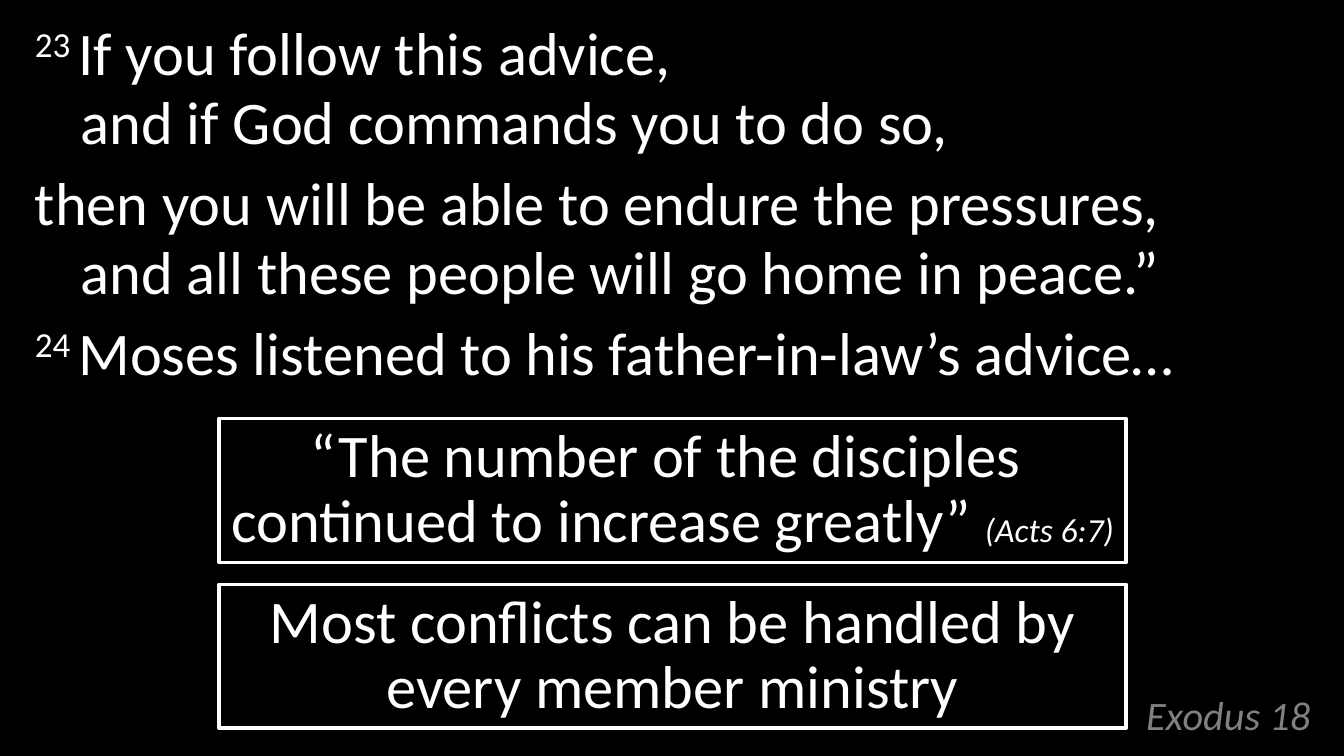
import pptx
import pptx.util
import pptx.dml.color
import pptx.enum.shapes
import pptx.enum.text

Inches = pptx.util.Inches
Pt = pptx.util.Pt
ALIGN = pptx.enum.text.PP_ALIGN
ANCHOR = pptx.enum.text.MSO_ANCHOR

WHITE, BLACK, GRAY = "FFFFFF", "000000", "808080"


def color(hex_code):
    return pptx.dml.color.RGBColor.from_string(hex_code)


def add_run(p, text, size=36, hex_code=WHITE, italic=False, superscript=False):
    r = p.add_run()
    r.text = text
    r.font.name = "Calibri"
    r.font.size = Pt(size)
    r.font.italic = italic
    r.font.color.rgb = color(hex_code)
    if superscript:
        r._r.get_or_add_rPr().set("baseline", "30000")


def add_lines(p, lines):
    for i, line in enumerate(lines):
        if i:
            p.add_line_break()
        add_run(p, line)


def add_text_frame(s, box, anchor):
    tf = s.shapes.add_textbox(*map(Inches, box)).text_frame
    tf.word_wrap = True
    tf.vertical_anchor = anchor
    return tf


def add_reference(s, box, text):
    p = add_text_frame(s, box, ANCHOR.BOTTOM).paragraphs[0]
    p.alignment = ALIGN.RIGHT
    p.line_spacing = 0.8
    add_run(p, text, 24, GRAY, italic=True)


def add_verses(s, box, verses):
    """Place (verse number, lines) pairs as paragraphs with a hanging indent."""
    tf = add_text_frame(s, box, ANCHOR.TOP)
    for i, (number, lines) in enumerate(verses):
        p = tf.add_paragraph() if i else tf.paragraphs[0]
        p.line_spacing = 0.95
        p.space_before = Pt(7.2)
        pPr = p._p.get_or_add_pPr()
        pPr.set("marL", str(Inches(0.38)))
        pPr.set("indent", str(-Inches(0.38)))
        if number:
            add_run(p, number + " ", superscript=True)
        add_lines(p, lines)


def add_callout(s, box, lines, citation=None):
    sp = s.shapes.add_shape(pptx.enum.shapes.MSO_SHAPE.RECTANGLE, *map(Inches, box))
    sp.shadow.inherit = False
    sp.fill.solid()
    sp.fill.fore_color.rgb = color(BLACK)
    sp.line.color.rgb = color(WHITE)
    sp.line.width = Pt(2)
    tf = sp.text_frame
    tf.word_wrap = True
    tf.vertical_anchor = ANCHOR.MIDDLE
    p = tf.paragraphs[0]
    p.alignment = ALIGN.CENTER
    p.line_spacing = 0.9
    add_lines(p, lines)
    if citation:
        add_run(p, citation, 20, italic=True)


def main():
    prs = pptx.Presentation()
    prs.slide_width = Inches(11.11)
    prs.slide_height = Inches(6.25)
    s = prs.slides.add_slide(prs.slide_layouts[6])
    s.background.fill.solid()
    s.background.fill.fore_color.rgb = color(BLACK)

    add_reference(s, (7.06, 5.56, 3.87, 0.59), "Exodus 18")
    add_verses(s, (0.19, 0.12, 10.74, 5.29), [
        ("23", ["If you follow this advice, ", "and if God commands you to do so,"]),
        (None, ["then you will be able to endure the pressures,",
                "and all these people will go home in peace.”"]),
        ("24", ["Moses listened to his father-in-law’s advice…"]),
    ])
    callouts = [
        (["“The number of the disciples ", "continued to increase greatly” "], "(Acts 6:7)"),
        (["Most conflicts can be handled by every member ministry"], None),
    ]
    for i, (lines, citation) in enumerate(callouts):
        add_callout(s, (1.81, 3.46 + i * 1.37, 7.5, 1.19), lines, citation)

    prs.save("out.pptx")


if __name__ == "__main__":
    main()
